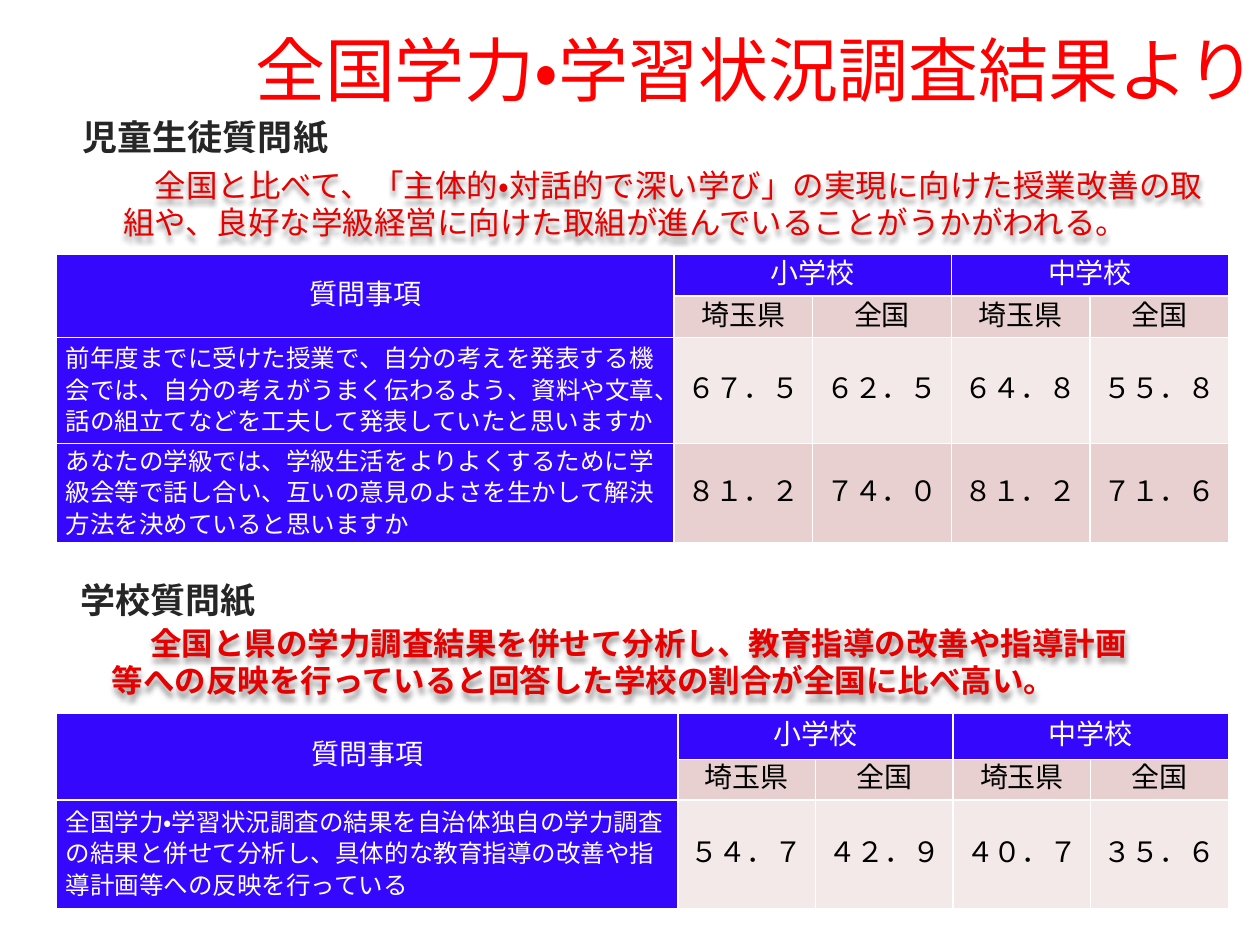
"""Build the slide of survey results with two comparison tables."""
from lxml import etree
from pptx import Presentation
from pptx.dml.color import RGBColor
from pptx.enum.lang import MSO_LANGUAGE_ID
from pptx.enum.text import MSO_ANCHOR, PP_ALIGN
from pptx.oxml import parse_xml
from pptx.oxml.ns import nsdecls, qn
from pptx.util import Pt

PX = 9144
TOP, MIDDLE = MSO_ANCHOR.TOP, MSO_ANCHOR.MIDDLE
LEFT, CENTER = PP_ALIGN.LEFT, PP_ALIGN.CENTER
JAPANESE = MSO_LANGUAGE_ID.JAPANESE
GOTHIC, SANS = "Noto Sans CJK JP", "Arial"
BLUE, WHITE, BLACK = "3607FD", "FFFFFF", "000000"
PINK, PALE = "E8D0D0", "F4E9E9"
RED, SCARLET, CHARCOAL = "FF0000", "E60000", "262626"


def rgb(value):
    """Return the colour for a hex string."""
    return RGBColor.from_string(value)


def write(para, text, size, name, color, bold=False):
    """Put text in a paragraph and set its font."""
    para.text = text
    font = para.font
    font.size, font.name, font.bold = Pt(size), name, bold
    font.color.rgb = rgb(color)
    font.language_id = JAPANESE


deck = Presentation()
deck.slide_width, deck.slide_height = 1000 * PX, 750 * PX
page = deck.slides.add_slide(deck.slide_layouts[6])

tables = [
    (202, 490, [33, 33, 84, 79], [
        ("前年度までに受けた授業で、自分の考えを発表する機会では、自分の考えがうまく伝わるよう、資料や文章、話の組立てなどを工夫して発表していたと思いますか",
         "６７．５", "６２．５", "６４．８", "５５．８"),
        ("あなたの学級では、学級生活をよりよくするために学級会等で話し合い、互いの意見のよさを生かして解決方法を決めていると思いますか",
         "８１．２", "７４．０", "８１．２", "７１．６"),
    ]),
    (566, 493, [37, 32, 86], [
        ("全国学力・学習状況調査の結果を自治体独自の学力調査の結果と併せて分析し、具体的な教育指導の改善や指導計画等への反映を行っている",
         "５４．７", "４２．９", "４０．７", "３５．６"),
    ]),
]
headers = [("質問事項", "小学校", "", "中学校", ""),
           ("", "埼玉県", "全国", "埼玉県", "全国")]

for top, question_width, heights, answers in tables:
    frame = page.shapes.add_table(len(heights), 5, 45 * PX, top * PX, 930 * PX, sum(heights) * PX)
    table = frame.table
    table.first_row = table.horz_banding = False
    for index, column in enumerate(table.columns):
        column.width = (930 - question_width) * PX // 4 if index else question_width * PX
    for row, height in zip(table.rows, heights):
        row.height = height * PX
    for first, last in [((0, 0), (1, 0)), ((0, 1), (0, 2)), ((0, 3), (0, 4))]:
        table.cell(*first).merge(table.cell(*last))
    for r, texts in enumerate(headers + answers):
        for c, text in enumerate(texts):
            cell = table.cell(r, c)
            cell.margin_left = cell.margin_right = 7 * PX
            cell.margin_top = cell.margin_bottom = 0
            cell.vertical_anchor = MIDDLE
            for side in ("lnL", "lnR", "lnT", "lnB"):
                cell._tc.get_or_add_tcPr().append(parse_xml(
                    f'<a:{side} {nsdecls("a")} w="12700"><a:solidFill>'
                    f'<a:srgbClr val="{WHITE}"/></a:solidFill></a:{side}>'))
            blue = r == 0 or c == 0
            cell.fill.solid()
            cell.fill.fore_color.rgb = rgb(BLUE if blue else PINK if r % 2 else PALE)
            if text:
                question = r > 1 and c == 0
                para = cell.text_frame.paragraphs[0]
                write(para, text, 14 if question else 16, SANS, WHITE if blue else BLACK)
                para.alignment = LEFT if question else CENTER
                para.line_spacing = Pt(18 if question else 18.4)

texts = [
    (88, 123, 879, 77, "全国と比べて、「主体的・対話的で深い学び」の実現に向けた授業改善の取組や、良好な学級経営に向けた取組が進んでいることがうかがわれる。",
     18, GOTHIC, SCARLET, False, 18, MIDDLE),
    (28, 87, 339, 44, "児童生徒質問紙", 20, GOTHIC, CHARCOAL, True, 20, TOP),
    (79, 477, 833, 96, "全国と県の学力調査結果を併せて分析し、教育指導の改善や指導計画等への反映を行っていると回答した学校の割合が全国に比べ高い。",
     18, GOTHIC, SCARLET, True, 22, MIDDLE),
    (26, 454, 332, 44, "学校質問紙", 20, GOTHIC, CHARCOAL, True, 20, TOP),
    (26, 16, 988, 77, "全国学力・学習状況調査結果より", 40, SANS, RED, False, 120, TOP),
]
for left, top, width, height, text, size, name, color, bold, indent, anchor in texts:
    box = page.shapes.add_textbox(left * PX, top * PX, width * PX, height * PX)
    box.text_frame.word_wrap = True
    box.text_frame.vertical_anchor = anchor
    para = box.text_frame.paragraphs[0]
    write(para, text, size, name, color, bold)
    para._p.get_or_add_pPr().set("indent", str(Pt(indent)))
    if color == SCARLET:
        effects = etree.SubElement(box._element.spPr, qn("a:effectLst"))
        shadow = etree.SubElement(effects, qn("a:outerShdw"), blurRad="38100", dist="38100", dir="5400000")
        shade = etree.SubElement(shadow, qn("a:srgbClr"), val=BLACK)
        etree.SubElement(shade, qn("a:alpha"), val="40000")

deck.save("out.pptx")
